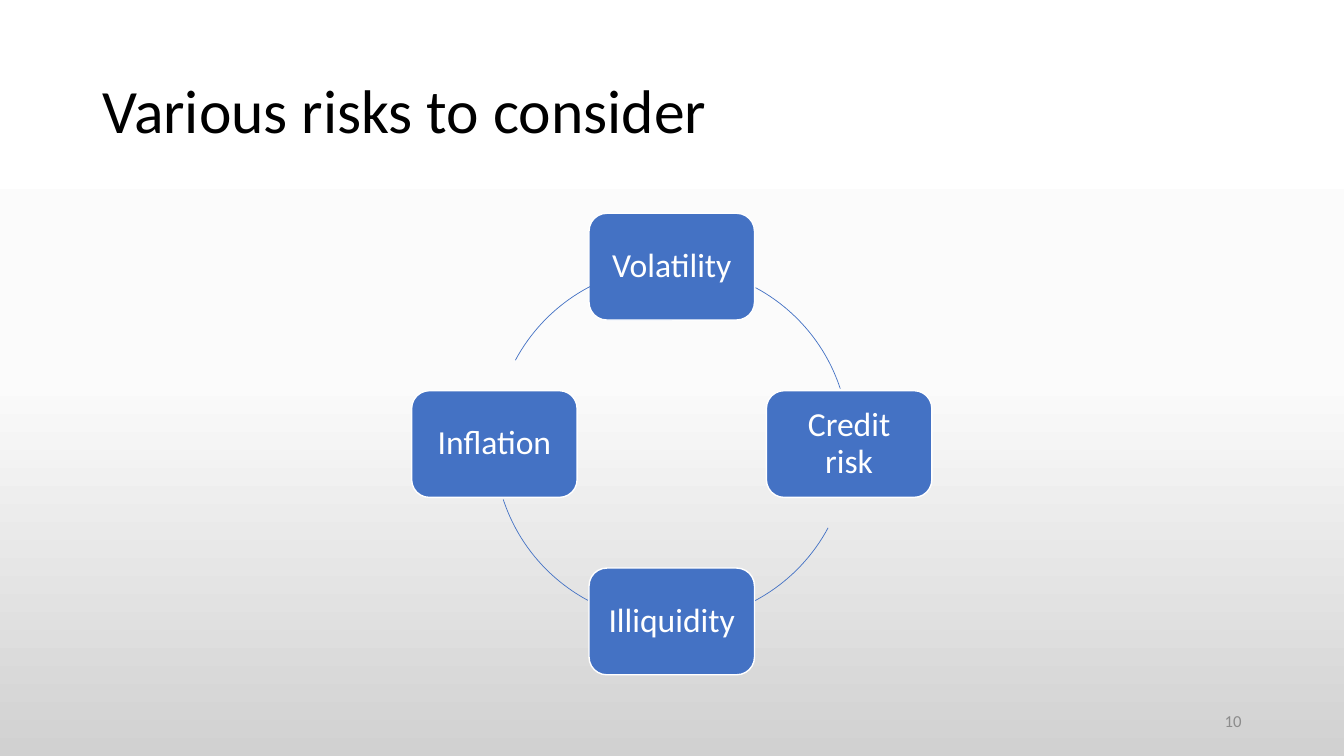
from copy import deepcopy
from math import cos, radians, sin

from pptx import Presentation
from pptx import util as u
from pptx.dml.color import RGBColor
from pptx.enum import shapes, text
from pptx.oxml.ns import qn

BLUE = RGBColor(0x44, 0x72, 0xC4)
WHITE = RGBColor(0xFF, 0xFF, 0xFF)
BLACK = RGBColor(0, 0, 0)
GRAY = RGBColor(0x8C, 0x8C, 0x8C)
BACKGROUND = [(0, WHITE), (0.5, RGBColor(0xFB, 0xFB, 0xFB)), (1, RGBColor(0xD1, 0xD1, 0xD1))]

TITLE = "Various risks to consider"
RISKS = ["Volatility", "Credit risk", "Illiquidity", "Inflation"]  # clockwise from the top
PAGE = "10"

# Lengths in cm, angles in degrees clockwise from the right
CENTER_X, CENTER_Y, RADIUS = 16.93, 11.19, 4.47
BOX_W, BOX_H = 4.17, 2.69
ARC_START, ARC_END = 28.2, 71.8  # measured from the box before the arc
TITLE_BOX = (2.33, 1.01, 29.21, 3.68)
PAGE_BOX = (23.92, 17.65, 7.62, 1.01)


def paint_background(slide):
    fill = slide.background.fill
    fill.gradient()
    fill.gradient_angle = 270
    stops = slide.element.find(".//" + qn("a:gsLst"))
    stops.insert(0, deepcopy(stops[0]))
    for stop, (position, color) in zip(fill.gradient_stops, BACKGROUND):
        stop.position = position
        stop.color.rgb = color


def write(sp, words, size, color, align, spacing=1.0):
    tf = sp.text_frame
    frame = {"word_wrap": True, "auto_size": text.MSO_AUTO_SIZE.NONE,
             "vertical_anchor": text.MSO_ANCHOR.MIDDLE}
    for name, value in frame.items():
        setattr(tf, name, value)
    p = tf.paragraphs[0]
    p.alignment, p.line_spacing = align, spacing
    r = p.add_run()
    r.text = words
    for name, value in {"name": "Calibri", "size": u.Pt(size)}.items():
        setattr(r.font, name, value)
    r.font.color.rgb = color


def add_outlined(slide, kind, box, color, width):
    sp = slide.shapes.add_shape(kind, *map(u.Cm, box))
    sp.shadow.inherit = False
    sp.line.color.rgb = color
    sp.line.width = u.Pt(width)
    return sp


def add_risk(slide, risk, angle):
    x = CENTER_X + RADIUS * cos(radians(angle)) - BOX_W / 2
    y = CENTER_Y + RADIUS * sin(radians(angle)) - BOX_H / 2
    sp = add_outlined(slide, shapes.MSO_SHAPE.ROUNDED_RECTANGLE, (x, y, BOX_W, BOX_H), WHITE, 1)
    sp.fill.solid()
    sp.fill.fore_color.rgb = BLUE
    for side in ("left", "top", "right", "bottom"):
        setattr(sp.text_frame, "margin_" + side, u.Cm(0.25))
    write(sp, risk, 24, WHITE, text.PP_ALIGN.CENTER, 0.9)


def add_arc(slide, angle):
    box = (CENTER_X - RADIUS, CENTER_Y - RADIUS, 2 * RADIUS, 2 * RADIUS)
    sp = add_outlined(slide, shapes.MSO_SHAPE.ARC, box, BLUE, 0.5)
    sp.fill.background()
    for i, offset in enumerate((ARC_START, ARC_END)):
        sp.adjustments[i] = (angle + offset) % 360 * 0.6  # 60000ths of a degree / 100000


def main():
    prs = Presentation()
    prs.slide_width, prs.slide_height = u.Cm(33.87), u.Cm(19.05)
    slide = prs.slides.add_slide(prs.slide_layouts[5])
    paint_background(slide)

    title = slide.shapes.title
    for name, value in zip(("left", "top", "width", "height"), TITLE_BOX):
        setattr(title, name, u.Cm(value))
    write(title, TITLE, 44, BLACK, text.PP_ALIGN.LEFT, 0.9)

    for i, risk in enumerate(RISKS):
        angle = 270 + i * 360 / len(RISKS)
        add_risk(slide, risk, angle)
        add_arc(slide, angle)

    page = slide.shapes.add_textbox(*map(u.Cm, PAGE_BOX))
    write(page, PAGE, 12, GRAY, text.PP_ALIGN.RIGHT)
    prs.save("out.pptx")


if __name__ == "__main__":
    main()
